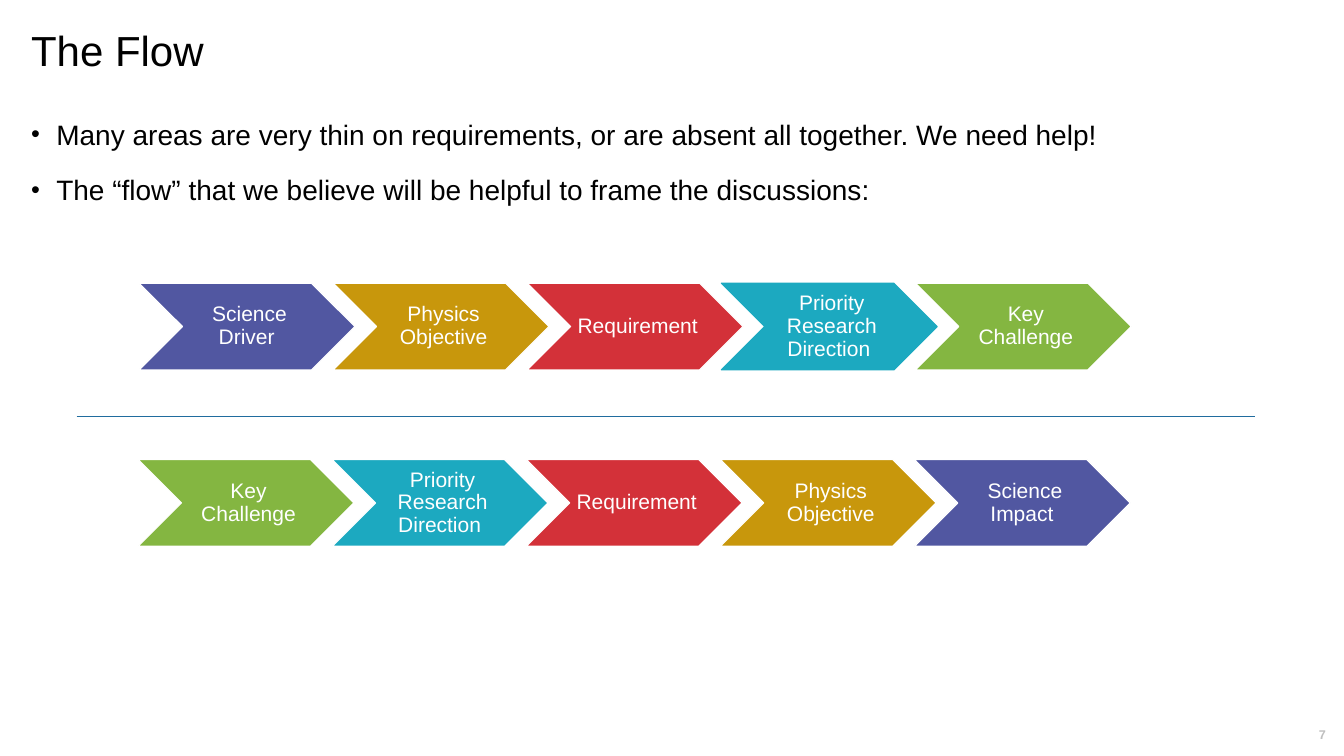
"""Build the slide "The Flow": two bullets and two chevron process rows."""
from dataclasses import dataclass

from lxml import etree
from pptx import Presentation
from pptx.dml.color import RGBColor
from pptx.enum.shapes import MSO_CONNECTOR, MSO_SHAPE
from pptx.enum.text import MSO_ANCHOR, PP_ALIGN
from pptx.oxml.ns import qn
from pptx.slide import Slide
from pptx.text.text import TextFrame
from pptx.util import Inches, Pt

CHEVRON = MSO_SHAPE.CHEVRON
STRAIGHT = MSO_CONNECTOR.STRAIGHT
MIDDLE = MSO_ANCHOR.MIDDLE
CENTER = PP_ALIGN.CENTER
LEFT = PP_ALIGN.LEFT

FONT = "Arial"
COLORS = {
    "black": "000000",
    "white": "FFFFFF",
    "gray": "BFBFBF",
    "rule": "206C9E",
    "indigo": "5157A1",
    "gold": "C8970C",
    "red": "D33139",
    "teal": "1CA9C0",
    "green": "84B641",
}

CHEVRON_WIDTH = 2.14
CHEVRON_HEIGHT = 0.86
CHEVRON_STEP = 7.7 / 4


@dataclass(frozen=True)
class Step:
    label: str
    fill: str
    outline: str = "white"


@dataclass(frozen=True)
class Flow:
    left: float
    top: float
    steps: tuple[Step, ...]


OBJECTIVE = Step("Physics Objective", "gold")
REQUIREMENT = Step("Requirement", "red")
CHALLENGE = Step("Key Challenge", "green")
DIRECTION = "Priority Research Direction "

FLOWS = (
    Flow(1.37, 4.56, (
        CHALLENGE,
        Step(DIRECTION, "teal"),
        REQUIREMENT,
        OBJECTIVE,
        Step("Science Impact ", "indigo"),
    )),
    Flow(1.38, 2.81, (
        Step("Science Driver ", "indigo"),
        OBJECTIVE,
        REQUIREMENT,
        Step(DIRECTION, "teal", "teal"),
        CHALLENGE,
    )),
)

BULLETS = (
    "Many areas are very thin on requirements, or are absent all together. We need help!",
    "The “flow” that we believe will be helpful to frame the discussions:",
)


def rgb(name: str) -> RGBColor:
    return RGBColor.from_string(COLORS[name])


def set_margins(text_frame: TextFrame, left: float, other: float) -> None:
    text_frame.margin_left = Inches(left)
    text_frame.margin_top = Inches(other)
    text_frame.margin_right = Inches(other)
    text_frame.margin_bottom = Inches(other)


def format_text(text_frame: TextFrame, size: float, color: str,
                alignment: PP_ALIGN = LEFT, bold: bool = False) -> None:
    text_frame.word_wrap = True
    for paragraph in text_frame.paragraphs:
        paragraph.alignment = alignment
        paragraph.line_spacing = 0.9
        for run in paragraph.runs:
            run.font.name = FONT
            run.font.size = Pt(size)
            run.font.bold = bold
            run.font.color.rgb = rgb(color)


def add_text(slide: Slide, left: float, top: float, width: float, height: float,
             text: str) -> TextFrame:
    text_box = slide.shapes.add_textbox(Inches(left), Inches(top), Inches(width), Inches(height))
    text_box.text_frame.text = text
    return text_box.text_frame


def add_bullets(slide: Slide) -> None:
    text_frame = add_text(slide, 0.21, 1.15, 12.75, 5.04, "\n".join(BULLETS))
    format_text(text_frame, 20, "black")
    for index, paragraph in enumerate(text_frame.paragraphs):
        if index:
            paragraph.space_before = Pt(18)
        properties = paragraph._p.get_or_add_pPr()
        properties.set("marL", str(Inches(0.25)))
        properties.set("indent", str(-Inches(0.25)))
        bullet_color = etree.SubElement(properties, qn("a:buClr"))
        etree.SubElement(bullet_color, qn("a:srgbClr"), val=COLORS["black"])
        etree.SubElement(properties, qn("a:buSzPct"), val="90000")
        etree.SubElement(properties, qn("a:buFont"), typeface=FONT)
        etree.SubElement(properties, qn("a:buChar"), char="•")


def add_flow(slide: Slide, flow: Flow) -> None:
    group = slide.shapes.add_group_shape()
    for index, step in enumerate(flow.steps):
        shape = group.shapes.add_shape(
            CHEVRON, Inches(flow.left + index * CHEVRON_STEP), Inches(flow.top),
            Inches(CHEVRON_WIDTH), Inches(CHEVRON_HEIGHT))
        shape.shadow.inherit = False
        shape.fill.solid()
        shape.fill.fore_color.rgb = rgb(step.fill)
        shape.line.color.rgb = rgb(step.outline)
        shape.line.width = Pt(0.85)
        text_frame = shape.text_frame
        text_frame.text = step.label
        text_frame.vertical_anchor = MIDDLE
        set_margins(text_frame, 0.05, 0)
        format_text(text_frame, 15, "white", CENTER)


def add_divider(slide: Slide) -> None:
    divider = slide.shapes.add_connector(
        STRAIGHT, Inches(0.76), Inches(4.13), Inches(12.45), Inches(4.13))
    divider.line.color.rgb = rgb("rule")
    divider.line.width = Pt(1)
    etree.SubElement(divider._element.spPr, qn("a:effectLst"))


def main() -> None:
    presentation = Presentation()
    presentation.slide_width = Inches(13.33)
    presentation.slide_height = Inches(7.5)
    slide = presentation.slides.add_slide(presentation.slide_layouts[6])

    number = add_text(slide, 12.96, 7.21, 0.31, 0.17, "7")
    number.vertical_anchor = MIDDLE
    set_margins(number, 0, 0)
    format_text(number, 9, "gray", CENTER, bold=True)

    title = add_text(slide, 0.21, 0.25, 12.75, 0.99, "The Flow")
    format_text(title, 30, "black")
    add_bullets(slide)
    for flow in FLOWS:
        add_flow(slide, flow)
    add_divider(slide)
    presentation.save("out.pptx")


if __name__ == "__main__":
    main()
